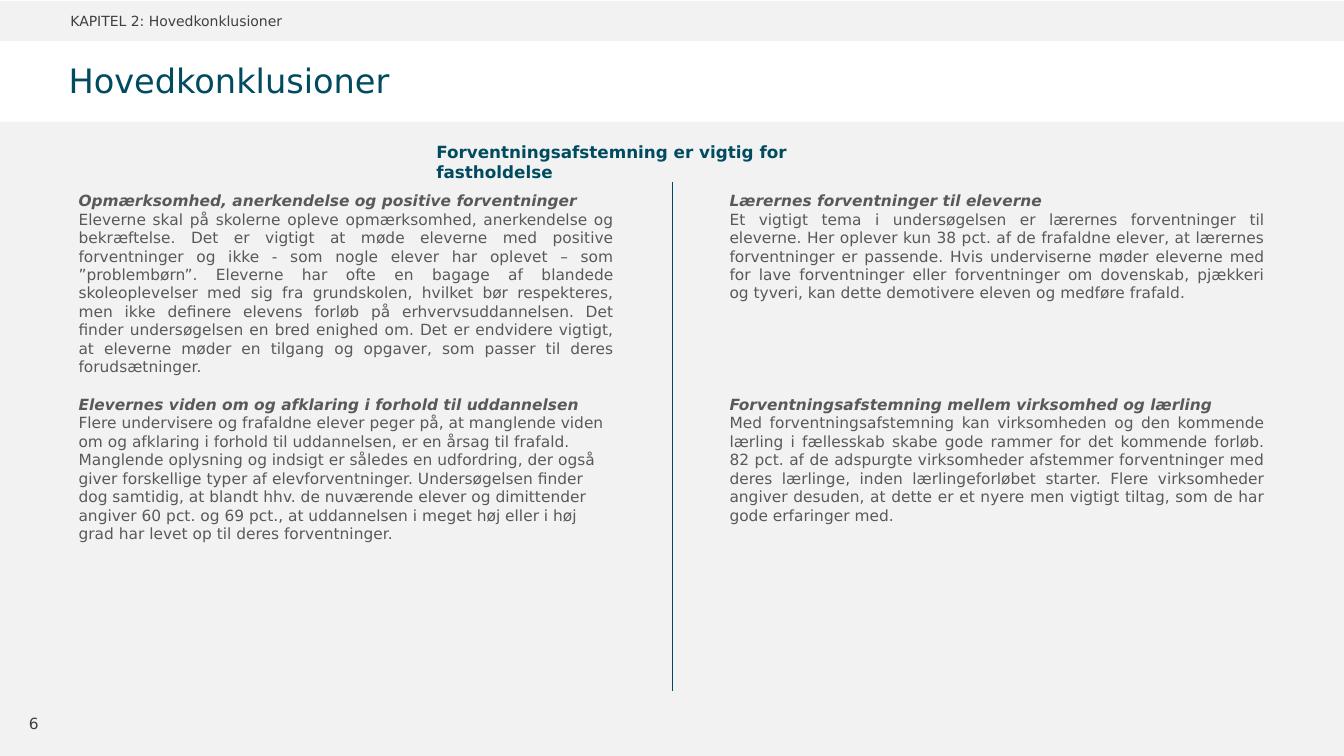
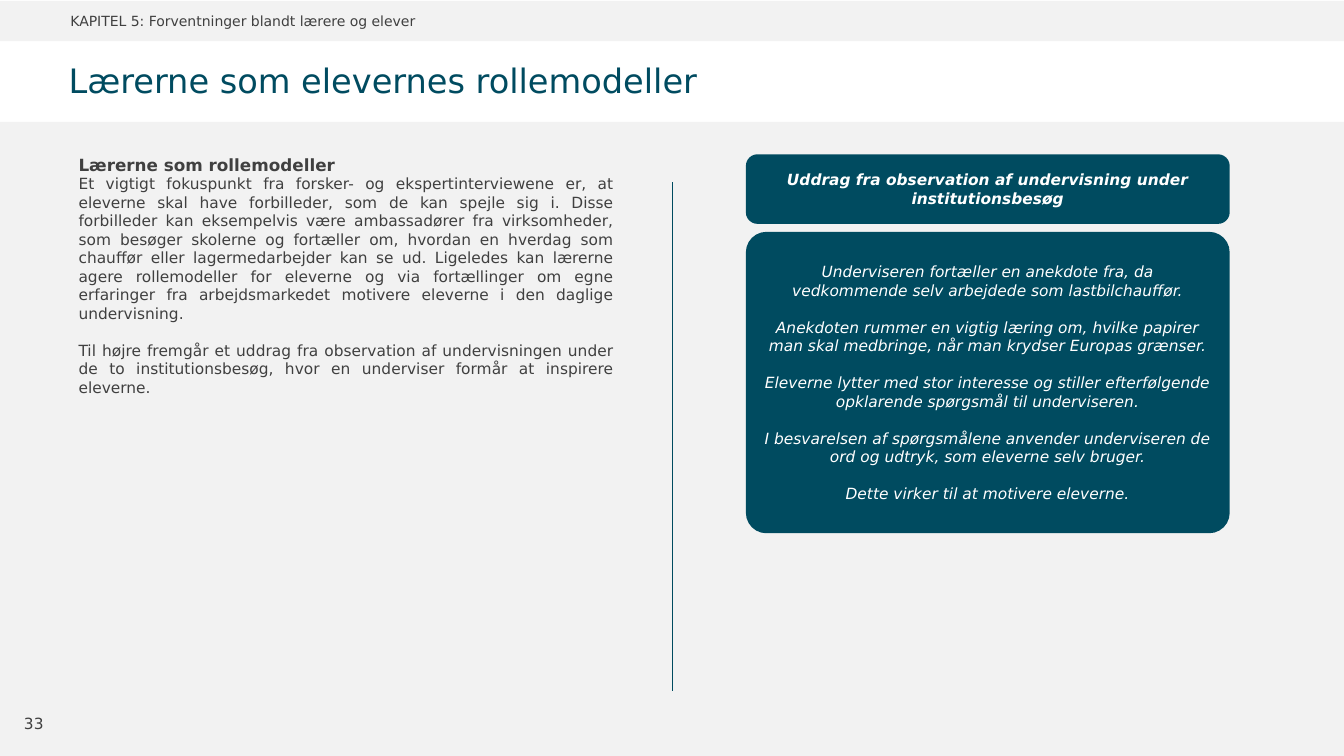
from lxml.etree import SubElement
from pptx import Presentation
from pptx.dml.color import RGBColor
from pptx.enum.shapes import MSO_CONNECTOR, MSO_SHAPE
from pptx.enum.text import MSO_ANCHOR, PP_ALIGN
from pptx.oxml.ns import qn
from pptx.util import Pt

COLORS = {"teal": "004B60", "band": "F2F2F2", "dark": "404040",
          "grey": "595959", "white": "FFFFFF"}
FONT = "DejaVu Sans"
WIDTH, HEIGHT = 960, 540
MIDDLE = WIDTH / 2
LINE = 13.2  # height of one line of body text
COLUMNS = (49, 514)
COLUMN_WIDTH = 396.7
ROWS = (133, 278.7)
ROW_HEIGHT = ROWS[1] - ROWS[0]


class Deck:
    def __init__(self):
        self.prs = Presentation()
        self.prs.slide_width, self.prs.slide_height = Pt(WIDTH), Pt(HEIGHT)
        self.slide = None

    def color(self, name):
        return RGBColor.from_string(COLORS[name])

    def start_slide(self, chapter, title, number):
        """Add a slide with its bands, chapter line, title, divider and number."""
        self.slide = self.prs.slides.add_slide(self.prs.slide_layouts[6])
        self.shape(MSO_SHAPE.RECTANGLE, 0, 0.7, WIDTH, 28.8, "band")
        self.shape(MSO_SHAPE.RECTANGLE, 0, 87.1, WIDTH, HEIGHT - 87.1, "band")
        self.label(chapter, 43.2, 0, 410.4, 29.5, size=10)
        self.label(number, 6.5, 502.6, 35.3, 28.8, align=PP_ALIGN.CENTER)
        self.title(title)
        self.divider(130.3, 493.9)

    def shape(self, preset, left, top, width, height, fill):
        shape = self.slide.shapes.add_shape(
            preset, Pt(left), Pt(top), Pt(width), Pt(height))
        shape.shadow.inherit = False
        shape.fill.solid()
        shape.fill.fore_color.rgb = self.color(fill)
        shape.line.fill.background()
        return shape

    def text_frame(self, left, top, width, height, anchor=MSO_ANCHOR.TOP):
        box = self.slide.shapes.add_textbox(
            Pt(left), Pt(top), Pt(width), Pt(height))
        frame = box.text_frame
        frame.word_wrap = True
        frame.vertical_anchor = anchor
        return frame

    def paragraph(self, frame, text, size=11, color="dark", bold=False,
                  italic=False, align=PP_ALIGN.LEFT, before=0):
        """Fill the empty first paragraph, or append a new one."""
        paragraph = frame.paragraphs[0]
        if paragraph.runs:
            paragraph = frame.add_paragraph()
            paragraph.space_before = Pt(before)
        paragraph.text = text
        paragraph.alignment = align
        font = paragraph.font
        font.name, font.size = FONT, Pt(size)
        font.bold, font.italic = bold, italic
        font.color.rgb = self.color(color)
        return paragraph

    def label(self, text, left, top, width, height,
              anchor=MSO_ANCHOR.MIDDLE, **style):
        frame = self.text_frame(left, top, width, height, anchor)
        self.paragraph(frame, text, **style)

    def title(self, text):
        frame = self.text_frame(49, 30.2, 856, 56.9, MSO_ANCHOR.MIDDLE)
        frame.word_wrap = False
        frame.margin_left = frame.margin_right = 0
        frame.margin_top = frame.margin_bottom = 0
        self.paragraph(frame, text, size=24, color="teal").line_spacing = 0.9

    def divider(self, top, bottom):
        line = self.slide.shapes.add_connector(
            MSO_CONNECTOR.STRAIGHT, Pt(MIDDLE), Pt(top), Pt(MIDDLE), Pt(bottom))
        line.line.width = Pt(0.5)
        line.line.color.rgb = self.color("teal")
        SubElement(line._element.spPr, qn("a:effectLst"))

    def section(self, left, top, height, heading, paragraphs, color="dark",
                heading_size=11, heading_italic=False, align=PP_ALIGN.JUSTIFY):
        """Bold heading followed directly by body paragraphs."""
        frame = self.text_frame(left, top, COLUMN_WIDTH, height)
        self.paragraph(frame, heading, heading_size, color, bold=True,
                       italic=heading_italic)
        for index, text in enumerate(paragraphs):
            self.paragraph(frame, text, color=color, align=align,
                           before=LINE if index else 0)

    def card(self, top, height, paragraphs, bold=False, corner=0.167):
        card = self.shape(MSO_SHAPE.ROUNDED_RECTANGLE, 532.8, top, 345.6,
                          height, "teal")
        card.adjustments[0] = corner
        frame = card.text_frame
        frame.word_wrap = True
        frame.vertical_anchor = MSO_ANCHOR.MIDDLE
        for text in paragraphs:
            self.paragraph(frame, text, color="white", bold=bold, italic=True,
                           align=PP_ALIGN.CENTER, before=LINE)


def conclusions_slide(deck):
    deck.start_slide("KAPITEL 2: Hovedkonklusioner", "Hovedkonklusioner", "6")
    deck.label("Forventningsafstemning er vigtig for fastholdelse",
               304.6, 97.9, 349.9, 29.5, anchor=MSO_ANCHOR.TOP,
               size=12, color="teal", bold=True)
    # column, row, alignment, heading, body
    sections = [
        (0, 0, PP_ALIGN.JUSTIFY,
         "Opmærksomhed, anerkendelse og positive forventninger",
         "Eleverne skal på skolerne opleve opmærksomhed, anerkendelse og "
         "bekræftelse. Det er vigtigt at møde eleverne med positive "
         "forventninger og ikke - som nogle elever har oplevet – som "
         "”problembørn”. Eleverne har ofte en bagage af blandede "
         "skoleoplevelser med sig fra grundskolen, hvilket bør respekteres, "
         "men ikke definere elevens forløb på erhvervsuddannelsen. Det finder "
         "undersøgelsen en bred enighed om. Det er endvidere vigtigt, at "
         "eleverne møder en tilgang og opgaver, som passer til deres "
         "forudsætninger."),
        (0, 1, PP_ALIGN.LEFT,
         "Elevernes viden om og afklaring i forhold til uddannelsen",
         "Flere undervisere og frafaldne elever peger på, at manglende viden "
         "om og afklaring i forhold til uddannelsen, er en årsag til frafald. "
         "Manglende oplysning og indsigt er således en udfordring, der også "
         "giver forskellige typer af elevforventninger. Undersøgelsen finder "
         "dog samtidig, at blandt hhv. de nuværende elever og dimittender "
         "angiver 60 pct. og 69 pct., at uddannelsen i meget høj eller i høj "
         "grad har levet op til deres forventninger."),
        (1, 0, PP_ALIGN.JUSTIFY,
         "Lærernes forventninger til eleverne",
         "Et vigtigt tema i undersøgelsen er lærernes forventninger til "
         "eleverne. Her oplever kun 38 pct. af de frafaldne elever, at "
         "lærernes forventninger er passende. Hvis underviserne møder "
         "eleverne med for lave forventninger eller forventninger om "
         "dovenskab, pjækkeri og tyveri, kan dette demotivere eleven og "
         "medføre frafald."),
        (1, 1, PP_ALIGN.JUSTIFY,
         "Forventningsafstemning mellem virksomhed og lærling",
         "Med forventningsafstemning kan virksomheden og den kommende lærling "
         "i fællesskab skabe gode rammer for det kommende forløb. 82 pct. af "
         "de adspurgte virksomheder afstemmer forventninger med deres "
         "lærlinge, inden lærlingeforløbet starter. Flere virksomheder "
         "angiver desuden, at dette er et nyere men vigtigt tiltag, som de "
         "har gode erfaringer med."),
    ]
    for column, row, align, heading, body in sections:
        deck.section(COLUMNS[column], ROWS[row], ROW_HEIGHT, heading, [body],
                     color="grey", heading_italic=True, align=align)


def role_models_slide(deck):
    deck.start_slide("KAPITEL 5: Forventninger blandt lærere og elever",
                     "Lærerne som elevernes rollemodeller", "33")
    deck.section(COLUMNS[0], 106.6, 375, "Lærerne som rollemodeller", [
        "Et vigtigt fokuspunkt fra forsker- og ekspertinterviewene er, at "
        "eleverne skal have forbilleder, som de kan spejle sig i. Disse "
        "forbilleder kan eksempelvis være ambassadører fra virksomheder, som "
        "besøger skolerne og fortæller om, hvordan en hverdag som chauffør "
        "eller lagermedarbejder kan se ud. Ligeledes kan lærerne agere "
        "rollemodeller for eleverne og via fortællinger om egne erfaringer "
        "fra arbejdsmarkedet motivere eleverne i den daglige undervisning.",
        "Til højre fremgår et uddrag fra observation af undervisningen under "
        "de to institutionsbesøg, hvor en underviser formår at inspirere "
        "eleverne.",
    ], heading_size=12)
    deck.card(110.2, 49.7, [
        "Uddrag fra observation af undervisning under institutionsbesøg",
    ], bold=True)
    deck.card(165.6, 215.3, [
        "Underviseren fortæller en anekdote fra, da vedkommende selv "
        "arbejdede som lastbilchauffør.",
        "Anekdoten rummer en vigtig læring om, hvilke papirer man skal "
        "medbringe, når man krydser Europas grænser.",
        "Eleverne lytter med stor interesse og stiller efterfølgende "
        "opklarende spørgsmål til underviseren.",
        "I besvarelsen af spørgsmålene anvender underviseren de ord og "
        "udtryk, som eleverne selv bruger.",
        "Dette virker til at motivere eleverne.",
    ], corner=0.068)


def main():
    deck = Deck()
    conclusions_slide(deck)
    role_models_slide(deck)
    deck.prs.save("out.pptx")


if __name__ == "__main__":
    main()
